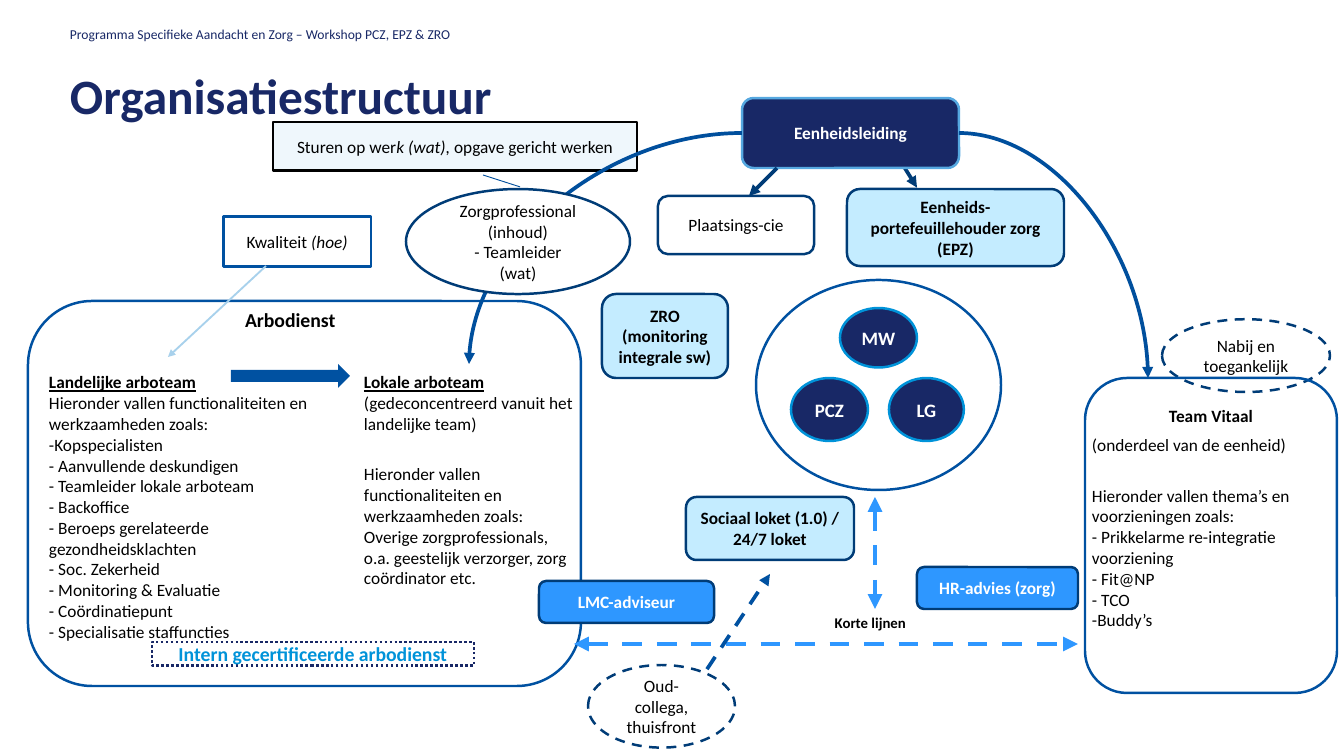
"""Build the organisation structure slide on a grid of 192 columns by 108 rows."""
from dataclasses import dataclass
from typing import NamedTuple, Optional, Union

from lxml import etree
from pptx import Presentation
from pptx import util as u
from pptx.dml.color import RGBColor
from pptx.enum import dml, shapes, text
from pptx.oxml import ns

WIDTH, HEIGHT = u.Inches(15.12), u.Inches(8.5)
COLUMNS, ROWS = 192, 108
FONT = "Calibri"

BLACK = RGBColor(0x00, 0x00, 0x00)
WHITE = RGBColor(0xFF, 0xFF, 0xFF)
NAVY = RGBColor(0x18, 0x28, 0x66)
DEEP = RGBColor(0x00, 0x3C, 0x77)
BLUE = RGBColor(0x00, 0x51, 0xA1)
CURVE_BLUE = RGBColor(0x00, 0x4F, 0x9D)
CYAN = RGBColor(0x00, 0x93, 0xD9)
BRIGHT = RGBColor(0x2E, 0x97, 0xFF)
SKY = RGBColor(0x56, 0xA8, 0xE0)
PALE = RGBColor(0xA8, 0xD1, 0xEC)
ICE = RGBColor(0xC4, 0xEC, 0xFF)
MIST = RGBColor(0xEF, 0xF7, 0xFC)

RECT = shapes.MSO_SHAPE.RECTANGLE
ROUND = shapes.MSO_SHAPE.ROUNDED_RECTANGLE
OVAL = shapes.MSO_SHAPE.OVAL
RIGHT_ARROW = shapes.MSO_SHAPE.RIGHT_ARROW
DASH, DOTS = dml.MSO_LINE.DASH, dml.MSO_LINE.ROUND_DOT
LEFT, CENTER = text.PP_ALIGN.LEFT, text.PP_ALIGN.CENTER
TOP, MIDDLE, BOTTOM = text.MSO_ANCHOR.TOP, text.MSO_ANCHOR.MIDDLE, text.MSO_ANCHOR.BOTTOM


class Run(NamedTuple):
    """A stretch of text with its own emphasis."""
    text: str
    bold: Optional[bool] = None
    italic: Optional[bool] = None
    underline: Optional[bool] = None


class Para(NamedTuple):
    """A paragraph with its runs, space before, weight and alignment."""
    runs: tuple[Run, ...]
    before: float = 0
    bold: Optional[bool] = None
    align: Optional[text.PP_ALIGN] = None


@dataclass
class Box:
    """A shape or text box, placed in grid columns and rows."""
    kind: Optional[shapes.MSO_SHAPE]
    area: tuple[float, float, float, float]
    paras: tuple[Union[str, Para], ...] = ()
    fill: Optional[RGBColor] = None
    line: Optional[RGBColor] = None
    dash: Optional[dml.MSO_LINE] = None
    color: RGBColor = BLACK
    size: float = 14
    bold: bool = False
    align: text.PP_ALIGN = CENTER
    anchor: text.MSO_ANCHOR = MIDDLE
    padded: bool = True
    top: float = 0
    wrap: bool = True


@dataclass
class Link:
    """A connector between two grid points."""
    start: tuple[float, float]
    end: tuple[float, float]
    color: RGBColor
    width: float = 3
    dash: Optional[dml.MSO_LINE] = None
    ends: tuple[str, ...] = ("tailEnd",)
    curved: bool = False


def x(columns: float) -> int:
    """Return the length of a number of columns."""
    return round(WIDTH * columns / COLUMNS)


def y(rows: float) -> int:
    """Return the length of a number of rows."""
    return round(HEIGHT * rows / ROWS)


def style_font(font, size: float, color: RGBColor, bold: bool) -> None:
    """Set typeface, size, colour and weight."""
    font.name, font.size, font.bold = FONT, u.Pt(size), bold
    font.color.rgb = color


def write(tf, box: Box) -> None:
    """Fill a text frame with the paragraphs of a box."""
    tf.word_wrap, tf.vertical_anchor = box.wrap, box.anchor
    if not box.padded:
        tf.margin_left = tf.margin_right = tf.margin_bottom = 0
        tf.margin_top = y(box.top)
    for i, item in enumerate(box.paras):
        para = Para((Run(item),)) if isinstance(item, str) else item
        p = tf.paragraphs[0] if i == 0 else tf.add_paragraph()
        p.alignment = box.align if para.align is None else para.align
        if para.before:
            p.space_before = u.Pt(para.before)
        style_font(p.font, box.size, box.color, box.bold if para.bold is None else para.bold)
        for run in para.runs:
            r = p.add_run()
            r.text = run.text
            r.font.bold, r.font.italic, r.font.underline = run.bold, run.italic, run.underline


def draw_box(slide, box: Box) -> None:
    """Draw a shape or text box."""
    col, row, cols, rows = box.area
    area = x(col), y(row), x(cols), y(rows)
    if box.kind is None:
        sp = slide.shapes.add_textbox(*area)
    else:
        sp = slide.shapes.add_shape(box.kind, *area)
        sp.shadow.inherit = False
        if box.fill is None:
            sp.fill.background()
        else:
            sp.fill.solid()
            sp.fill.fore_color.rgb = box.fill
        if box.line is None:
            sp.line.fill.background()
        else:
            sp.line.color.rgb, sp.line.width = box.line, u.Pt(2)
            sp.line.dash_style = box.dash
    if box.paras:
        write(sp.text_frame, box)


def draw_link(slide, link: Link) -> None:
    """Draw a connector with its arrowheads."""
    kind = shapes.MSO_CONNECTOR.CURVE if link.curved else shapes.MSO_CONNECTOR.STRAIGHT
    (x1, y1), (x2, y2) = link.start, link.end
    cxn = slide.shapes.add_connector(kind, x(x1), y(y1), x(x2), y(y2))
    cxn.line.color.rgb, cxn.line.width = link.color, u.Pt(link.width)
    cxn.line.dash_style = link.dash
    sppr = cxn._element.spPr
    if link.curved:
        sppr.find(ns.qn("a:prstGeom")).set("prst", "curvedConnector2")
    for end in link.ends:
        etree.SubElement(sppr.find(ns.qn("a:ln")), ns.qn(f"a:{end}"), type="triangle")
    etree.SubElement(sppr, ns.qn("a:effectLst"))


def plain_text(area, paras, **style) -> Box:
    """Return a white borderless text panel without padding."""
    return Box(RECT, area, paras, **{"fill": WHITE, "align": LEFT, "padded": False, **style})


def card(area, *paras, fill=ICE, color=BLACK, bold=True, line=DEEP) -> Box:
    """Return a rounded card."""
    return Box(ROUND, area, paras, fill, line, color=color, bold=bold)


def role(area, name) -> Box:
    """Return a dark role bubble."""
    return Box(OVAL, area, (name,), NAVY, CYAN, color=WHITE, size=15.3, bold=True)


BOTH = ("headEnd", "tailEnd")
NATIONAL = (
    Para((Run("Landelijke arboteam", underline=True),), bold=True),
    "Hieronder vallen functionaliteiten en werkzaamheden zoals:", "-Kopspecialisten",
    "- Aanvullende deskundigen", "- Teamleider lokale arboteam", "- Backoffice",
    "- Beroeps gerelateerde gezondheidsklachten", "- Soc. Zekerheid",
    "- Monitoring & Evaluatie", "- Coördinatiepunt", "- Specialisatie staffuncties")
LOCAL = (
    Para((Run("Lokale arboteam ", bold=True, underline=True),
          Run("(gedeconcentreerd vanuit het landelijke team)"))),
    Para((Run("Hieronder vallen functionaliteiten en werkzaamheden zoals:"),), 24),
    "Overige zorgprofessionals, o.a. geestelijk verzorger, zorg coördinator etc.")
VITAL = (
    Para((Run("Team Vitaal"),), bold=True, align=CENTER),
    Para((Run("(onderdeel van de eenheid)"),), 7),
    Para((Run("Hieronder vallen thema’s en voorzieningen zoals:"),), 24),
    "- Prikkelarme re-integratie voorziening", "- Fit@NP", "- TCO", "-Buddy’s")
STEER = Para((Run("Sturen op wer"), Run("k (wat), ", italic=True), Run("opgave gericht werken")))
QUALITY = Para((Run("Kwaliteit "), Run("(hoe)", italic=True)))

ITEMS = (
    Link((128, 22), (131, 26.8), DEEP),
    plain_text((35, 44, 20, 3.4), ("Arbodienst",), size=16, bold=True),
    plain_text((7, 52, 37, 47.9), NATIONAL, anchor=TOP, top=1.1),
    plain_text((52, 52, 30, 36), LOCAL, anchor=TOP, top=1.1),
    Box(RIGHT_ARROW, (33, 52, 17, 3.4), fill=BLUE),
    plain_text((21.7, 91.7, 46, 3.4), ("Intern gecertificeerde arbodienst",), line=NAVY,
               dash=DOTS, color=CYAN, size=16, bold=True, align=CENTER),
    Box(ROUND, (4, 43, 79, 55), line=BLUE),
    Box(RECT, (31.9, 30.9, 21.1, 7.2), (QUALITY,), WHITE, BLUE),
    Link((38, 38), (24, 51), PALE, 1.5),
    card((106, 14, 31, 10), "Eenheidsleiding", fill=NAVY, color=WHITE, line=SKY),
    Box(RECT, (39, 17.4, 52, 7), (STEER,), MIST, BLACK),
    card((94, 28, 22.3, 8.3), "Plaatsings-cie", fill=None, bold=False),
    card((121, 27, 31, 11), "Eenheids- portefeuillehouder zorg (EPZ)"),
    plain_text((156, 57.5, 34, 32.9), VITAL),
    Box(OVAL, (166, 45.6, 24, 10.4), ("Nabij en toegankelijk",), line=DEEP, dash=DASH),
    Box(OVAL, (108, 40, 35, 30), line=BLUE),
    role((120, 44, 11, 8.5), "MW"),
    role((113, 54, 11, 9), "PCZ"),
    role((127, 54, 10.7, 9), "LG"),
    card((98, 71, 24, 9), "Sociaal loket (1.0) / 24/7 loket"),
    card((131, 81, 23, 6), "HR-advies (zorg)", fill=BRIGHT, color=WHITE),
    card((77, 83, 25, 6), "LMC-adviseur", fill=BRIGHT, color=WHITE),
    card((86, 42, 18, 12), "ZRO", "(monitoring integrale sw)"),
    Box(OVAL, (84, 95, 21, 11.8), ("Oud-collega, thuisfront",), line=DEEP, dash=DASH),
    Link((82, 92), (154, 92), BRIGHT, 4, DASH, BOTH),
    Box(ROUND, (155, 54, 36, 45), line=BLUE),
    Link((101, 95.6), (110, 82), BLUE, dash=DASH),
    Link((125, 71), (125, 87), BRIGHT, 4, DASH, BOTH),
    Box(None, (118, 87, 14.3, 3.8), ("Korte lijnen",), size=12, bold=True, align=LEFT,
        anchor=TOP, wrap=False),
    Link((137, 19), (164, 54), CURVE_BLUE, curved=True),
    Link((106, 19), (67, 52), CURVE_BLUE, curved=True),
    Box(OVAL, (58, 27, 32, 15), ("Zorgprofessional (inhoud)", "- Teamleider", "(wat)"), WHITE, DEEP),
    Link((111, 24), (107, 28), DEEP),
    Link((69, 25), (74.3, 26.7), CURVE_BLUE, 0.75, ends=()),
    Box(None, (10, 4, 172, 2), ("Programma Specifieke Aandacht en Zorg – Workshop PCZ, EPZ & ZRO",),
        color=NAVY, size=11, align=LEFT, anchor=BOTTOM, padded=False),
)


def main() -> None:
    """Build and save the slide."""
    prs = Presentation()
    prs.slide_width, prs.slide_height = WIDTH, HEIGHT
    slide = prs.slides.add_slide(prs.slide_layouts[5])
    title = slide.shapes.title
    title.left, title.top, title.width, title.height = x(10), y(10), x(172), y(8)
    write(title.text_frame, Box(None, (10, 10, 172, 8), ("Organisatiestructuur",), color=NAVY,
                                size=40, bold=True, align=LEFT, anchor=TOP, padded=False, top=0.25))
    title.text_frame.paragraphs[0].line_spacing = 0.9
    for item in ITEMS:
        if isinstance(item, Box):
            draw_box(slide, item)
        else:
            draw_link(slide, item)
    prs.save("out.pptx")


if __name__ == "__main__":
    main()
